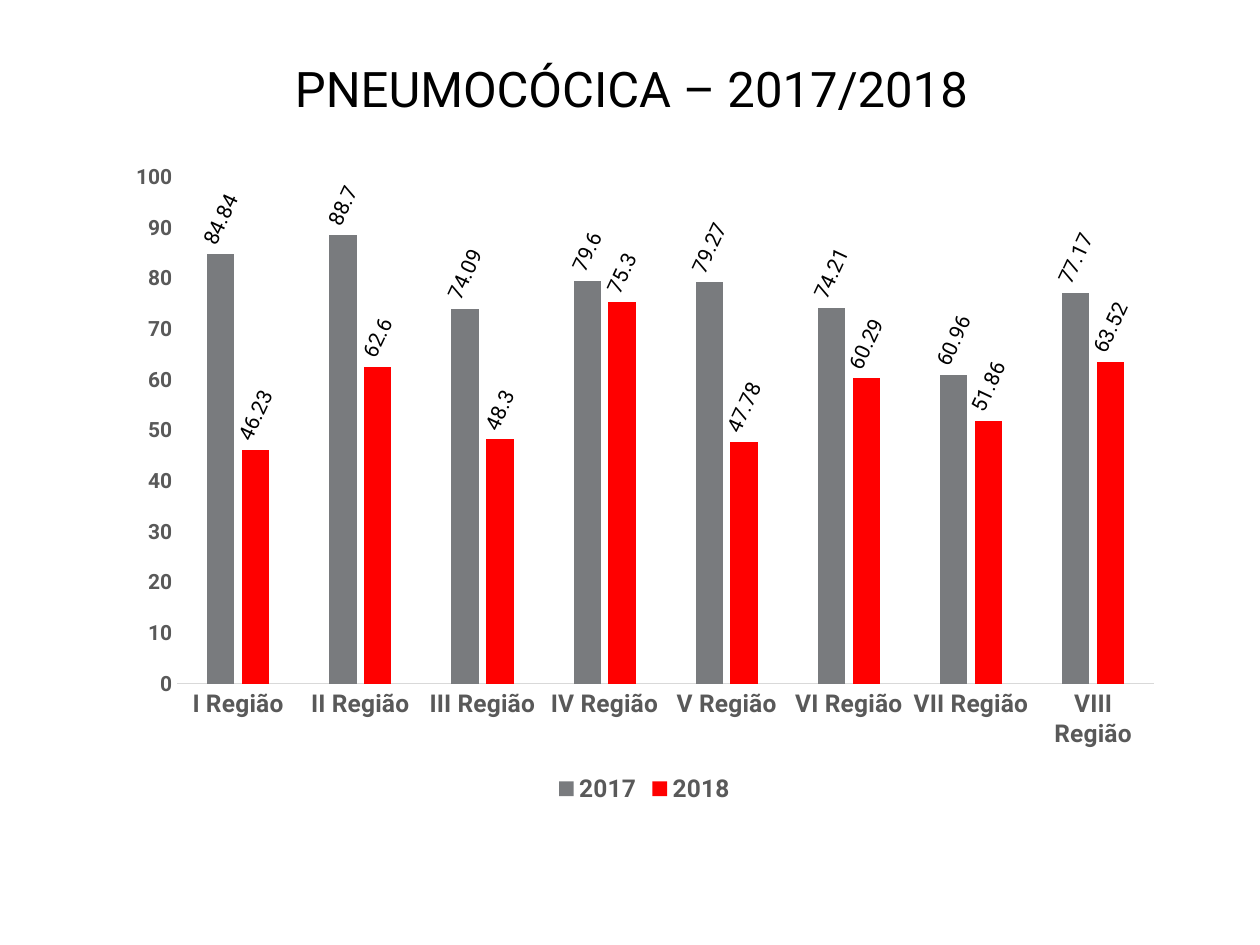
from dataclasses import dataclass

import pptx
import pptx.chart.data
import pptx.dml.color
import pptx.enum.chart
import pptx.enum.text
import pptx.oxml
import pptx.oxml.ns
import pptx.util
from pptx.util import Inches


@dataclass(frozen=True)
class Theme:
    font: str = "Roboto"
    ink: str = "000000"
    axis_text: str = "595959"
    axis_line: str = "D9D9D9"
    series: tuple = ("797B7E", "FF0000")
    title_size: int = 28
    category_size: int = 14
    value_size: int = 12
    base_size: int = 10


THEME = Theme()
REGIONS = [f"{numeral} Região" for numeral in
           ("I", "II", "III", "IV", "V", "VI", "VII", "VIII")]
COVERAGE = {
    "2017": (84.84, 88.7, 74.09, 79.6, 79.27, 74.21, 60.96, 77.17),
    "2018": (46.23, 62.6, 48.3, 75.3, 47.78, 60.29, 51.86, 63.52),
}
PLOT_LAYOUT = {"x": 0.06, "y": 0.04, "w": 0.92, "h": 0.77}
LABEL_ANGLE = -65


def rgb(value):
    return pptx.dml.color.RGBColor.from_string(value)


def style_font(font, size, color, bold=False):
    font.name = THEME.font
    font.size = pptx.util.Pt(size)
    font.bold = bold
    font.color.rgb = rgb(color)


def add_title(slide, left, top, width, height):
    box = slide.shapes.add_textbox(left, top, width, height)
    frame = box.text_frame
    frame.word_wrap = True
    frame.vertical_anchor = pptx.enum.text.MSO_ANCHOR.MIDDLE
    para = frame.paragraphs[0]
    para.alignment = pptx.enum.text.PP_ALIGN.CENTER
    span = para.add_run()
    span.text = "PNEUMOCÓCICA – 2017/2018"
    style_font(span.font, THEME.title_size, THEME.ink)


def style_axes(chart):
    no_tick = pptx.enum.chart.XL_TICK_MARK.NONE
    sizes = ((chart.category_axis, THEME.category_size),
             (chart.value_axis, THEME.value_size))
    for axis, size in sizes:
        axis.major_tick_mark = axis.minor_tick_mark = no_tick
        axis.has_major_gridlines = False
        style_font(axis.tick_labels.font, size, THEME.axis_text, bold=True)
    line = chart.category_axis.format.line
    line.color.rgb = rgb(THEME.axis_line)
    line.width = pptx.util.Pt(0.75)
    scale = chart.value_axis
    scale.format.line.fill.background()
    scale.minimum_scale, scale.maximum_scale, scale.major_unit = 0, 100, 10


def style_columns(plot):
    plot.gap_width = 219
    plot.overlap = -27
    plot.vary_by_categories = False
    for series, color in zip(plot.series, THEME.series):
        series.format.fill.solid()
        series.format.fill.fore_color.rgb = rgb(color)
        series.invert_if_negative = False
        labels = series.data_labels
        labels.show_value = True
        labels.position = pptx.enum.chart.XL_LABEL_POSITION.OUTSIDE_END
        style_font(labels.font, THEME.value_size, THEME.ink)


def tilt_labels(chart):
    for body in chart.element.xpath(".//c:ser/c:dLbls/c:txPr/a:bodyPr"):
        body.set("rot", str(LABEL_ANGLE * 60000))
        body.set("vert", "horz")


def fix_plot_layout(chart):
    """Pin the inner plot area to fractions of the chart's box."""
    area = chart.element.xpath("c:chart/c:plotArea")[0]
    for old in area.xpath("c:layout"):
        area.remove(old)
    settings = {"layoutTarget": "inner", "xMode": "edge", "yMode": "edge",
                **PLOT_LAYOUT}
    parts = "".join(f'<c:{name} val="{value}"/>'
                    for name, value in settings.items())
    area.insert(0, pptx.oxml.parse_xml(
        f'<c:layout {pptx.oxml.ns.nsdecls("c")}>'
        f"<c:manualLayout>{parts}</c:manualLayout></c:layout>"))


def add_coverage_chart(slide, left, top, width, height):
    data = pptx.chart.data.CategoryChartData()
    data.categories = REGIONS
    for year, values in COVERAGE.items():
        data.add_series(year, values)
    chart = slide.shapes.add_chart(
        pptx.enum.chart.XL_CHART_TYPE.COLUMN_CLUSTERED,
        left, top, width, height, data).chart
    style_font(chart.font, THEME.base_size, THEME.ink)
    chart.has_title = False
    chart.has_legend = True
    chart.legend.position = pptx.enum.chart.XL_LEGEND_POSITION.BOTTOM
    chart.legend.include_in_layout = False
    style_font(chart.legend.font, THEME.category_size, THEME.axis_text,
               bold=True)
    style_axes(chart)
    style_columns(chart.plots[0])
    tilt_labels(chart)
    fix_plot_layout(chart)


def main():
    deck = pptx.Presentation()
    deck.slide_width, deck.slide_height = Inches(10), Inches(7.5)
    slide = deck.slides.add_slide(deck.slide_layouts[6])
    add_title(slide, Inches(0.9), Inches(0.4), Inches(8.22), Inches(0.6))
    add_coverage_chart(slide, Inches(0.9), Inches(1.2),
                       Inches(8.43), Inches(5.22))
    deck.save("out.pptx")


if __name__ == "__main__":
    main()
